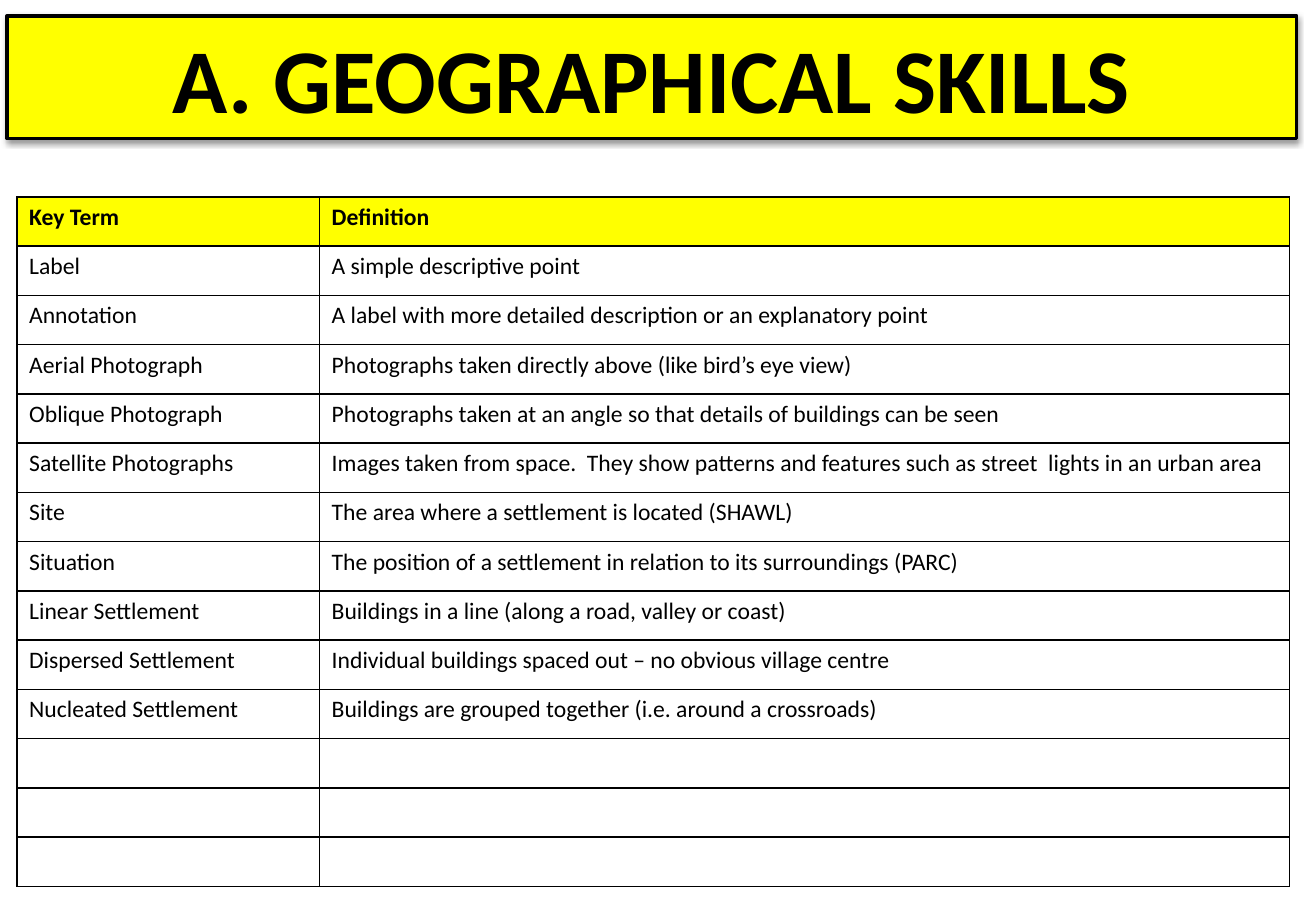
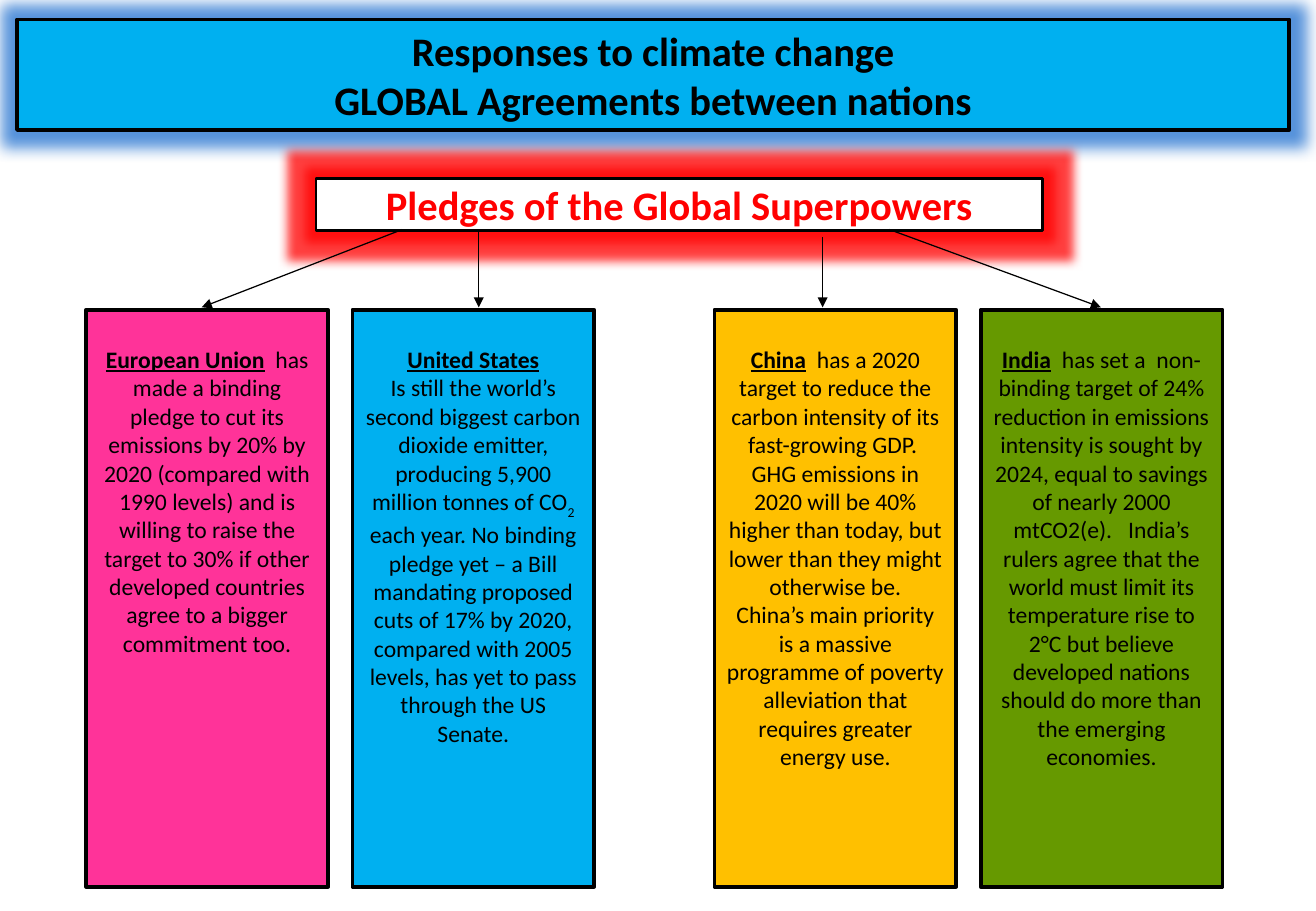
from lxml import etree
from pptx import Presentation
from pptx.dml.color import RGBColor
from pptx.enum.shapes import MSO_CONNECTOR, MSO_SHAPE
from pptx.enum.text import MSO_ANCHOR, MSO_AUTO_SIZE, PP_ALIGN
from pptx.oxml.ns import qn
from pptx.util import Inches, Pt

CENTER, LEFT = PP_ALIGN.CENTER, PP_ALIGN.LEFT
TOP, MIDDLE = MSO_ANCHOR.TOP, MSO_ANCHOR.MIDDLE
RECTANGLE = MSO_SHAPE.RECTANGLE
STRAIGHT = MSO_CONNECTOR.STRAIGHT

# Shared look
FONT = "Calibri"
BLACK, WHITE, RED = "000000", "FFFFFF", "FF0000"
YELLOW, BLUE, PINK = "FFFF00", "00B0F0", "FF3399"
AMBER, GREEN, GLOW_BLUE = "FFC000", "669900", "1F6FCF"
BODY_SIZE = 14
TITLE_ONLY = 5

# Slide 1: terms and definitions
KEY_TERMS = [
    ("Key Term", "Definition"),
    ("Label", "A simple descriptive point"),
    ("Annotation", "A label with more detailed description or an explanatory point"),
    ("Aerial Photograph", "Photographs taken directly above (like bird’s eye view)"),
    ("Oblique Photograph",
     "Photographs taken at an angle so that details of buildings can be seen"),
    ("Satellite Photographs",
     "Images taken from space.  They show patterns and features such as street  "
     "lights in an urban area"),
    ("Site", "The area where a settlement is located (SHAWL)"),
    ("Situation", "The position of a settlement in relation to its surroundings (PARC)"),
    ("Linear Settlement", "Buildings in a line (along a road, valley or coast)"),
    ("Dispersed Settlement", "Individual buildings spaced out – no obvious village centre"),
    ("Nucleated Settlement", "Buildings are grouped together (i.e. around a crossroads)"),
]
SPARE_ROWS = 3
ROW_HEIGHT = 5.68 / (len(KEY_TERMS) + SPARE_ROWS)

# Slide 2: paragraphs of (text, style) spans for each pledge
HEAD, PLAIN, SUB = "head", "plain", "sub"
PLEDGES = [
    (0.71, PINK, [
        [("European Union", HEAD),
         ("  has made a binding pledge to cut its emissions by 20% by 2020 (compared "
          "with 1990 levels) and is willing to raise the target to 30% if other "
          "developed countries agree to a bigger commitment too.", PLAIN)]]),
    (2.9, BLUE, [
        [("United States", HEAD)],
        [("Is still the world’s second biggest carbon dioxide emitter, producing "
          "5,900 million tonnes of CO", PLAIN),
         ("2 ", SUB),
         ("each year. No binding pledge yet – a Bill mandating proposed cuts of 17% "
          "by 2020, compared with 2005 levels, has yet to pass through the US "
          "Senate.", PLAIN)]]),
    (5.88, AMBER, [
        [("China", HEAD),
         ("  has a 2020 target to reduce the carbon intensity of its fast-growing "
          "GDP.  GHG emissions in 2020 will be 40% higher than today, but lower than "
          "they might otherwise be.", PLAIN)],
        [("China’s main priority is a massive programme of poverty alleviation that "
          "requires greater energy use.", PLAIN)]]),
    (8.07, GREEN, [
        [("India", HEAD),
         ("  has set a  non-binding target of 24% reduction in emissions intensity is "
          "sought by 2024, equal to savings of nearly 2000 mtCO2(e).   India’s rulers "
          "agree that the world must limit its temperature rise to 2°C but believe "
          "developed nations should do more than the emerging economies.", PLAIN)]]),
]
ARROWS = [  # start x, start y, end x
    (7.32, 1.89, 9.06), (6.77, 1.95, 6.77), (3.94, 1.89, 3.94), (3.31, 1.89, 1.66),
]
ARROW_END = 2.53


def color(value):
    return RGBColor.from_string(value)


def add_span(para, text, size, ink=BLACK, bold=False):
    span = para.add_run()
    span.text = text
    font = span.font
    font.name, font.size, font.bold = FONT, Pt(size), bold
    font.color.rgb = color(ink)
    return span


def paragraphs(frame, count, align):
    """Return count aligned paragraphs, starting with the existing one."""
    paras = [frame.paragraphs[0]] + [frame.add_paragraph() for _ in range(count - 1)]
    for para in paras:
        para.alignment = align
    return paras


def style_box(box, fill, line_width, anchor, top_inset=0.05):
    box.fill.solid()
    box.fill.fore_color.rgb = color(fill)
    box.line.color.rgb = color(BLACK)
    box.line.width = Pt(line_width)
    frame = box.text_frame
    frame.word_wrap = True
    frame.auto_size = MSO_AUTO_SIZE.NONE
    frame.vertical_anchor = anchor
    frame.margin_top = Inches(top_inset)
    return frame


def add_box(page, area, fill, line_width, anchor, top_inset=0.05):
    box = page.shapes.add_shape(RECTANGLE, *map(Inches, area))
    box.shadow.inherit = False
    return box, style_box(box, fill, line_width, anchor, top_inset)


def add_effect(box, kind, ink, alpha, **settings):
    """Append a glow or shadow to the shape's effect list."""
    box.shadow.inherit = False
    effects = box._element.spPr.find(qn("a:effectLst"))
    return_to = etree.SubElement(effects, qn("a:" + kind), settings)
    tint = etree.SubElement(return_to, qn("a:srgbClr"), val=ink)
    etree.SubElement(tint, qn("a:alpha"), val=str(alpha * 1000))


def add_glow(box, ink, alpha, radius):
    add_effect(box, "glow", ink, alpha, rad=str(Pt(radius)))


def set_title(page, lines, area, fill, size):
    box = page.shapes.title
    box.left, box.top, box.width, box.height = map(Inches, area)
    frame = style_box(box, fill, 2.25, MIDDLE)
    for para, line in zip(paragraphs(frame, len(lines), CENTER), lines):
        add_span(para, line, size, bold=True)
    return box


def add_cell_borders(cell):
    props = cell._tc.get_or_add_tcPr()
    for index, side in enumerate(("lnL", "lnR", "lnT", "lnB")):
        line = etree.Element(qn("a:" + side), w=str(Pt(1)))
        fill = etree.SubElement(line, qn("a:solidFill"))
        etree.SubElement(fill, qn("a:srgbClr"), val=BLACK)
        props.insert(index, line)


def add_terms_table(page):
    row_count = len(KEY_TERMS) + SPARE_ROWS
    table = page.shapes.add_table(
        row_count, 2, Inches(0.14), Inches(1.62),
        Inches(10.47), Inches(ROW_HEIGHT * row_count)).table
    table.columns[0].width, table.columns[1].width = Inches(2.49), Inches(7.98)
    rows = KEY_TERMS + [("", "")] * SPARE_ROWS
    for row_index, texts in enumerate(rows):
        header = row_index == 0
        table.rows[row_index].height = Inches(ROW_HEIGHT)
        for column, text in enumerate(texts):
            cell = table.cell(row_index, column)
            cell.fill.solid()
            cell.fill.fore_color.rgb = color(YELLOW if header else WHITE)
            add_cell_borders(cell)
            if text:
                add_span(cell.text_frame.paragraphs[0], text, BODY_SIZE, bold=header)


def add_pledge(page, left, fill, content):
    _, frame = add_box(page, (left, 2.55, 1.99, 4.75), fill, 2.25, TOP, top_inset=0.29)
    for para, spans in zip(paragraphs(frame, len(content), CENTER), content):
        for text, style in spans:
            span = add_span(para, text, BODY_SIZE, bold=style == HEAD)
            if style == HEAD:
                span.font.underline = True
            elif style == SUB:
                span._r.get_or_add_rPr().set("baseline", "-30000")


def add_arrow(page, start_x, start_y, end_x):
    arrow = page.shapes.add_connector(
        STRAIGHT, *map(Inches, (start_x, start_y, end_x, ARROW_END)))
    arrow.line.color.rgb = color(BLACK)
    arrow.line.width = Pt(0.75)
    etree.SubElement(arrow.line._get_or_add_ln(), qn("a:tailEnd"), type="triangle")
    etree.SubElement(arrow._element.spPr, qn("a:effectLst"))


def build_skills(deck):
    page = deck.slides.add_slide(deck.slide_layouts[TITLE_ONLY])
    title = set_title(page, ["A. GEOGRAPHICAL SKILLS"],
                      (0.06, 0.13, 10.61, 1.01), YELLOW, 54)
    add_effect(title, "outerShdw", BLACK, 38, blurRad=str(Pt(3.1)),
               dist=str(Pt(1.6)), dir="5400000", rotWithShape="0")
    add_terms_table(page)


def build_pledges(deck):
    page = deck.slides.add_slide(deck.slide_layouts[TITLE_ONLY])
    title = set_title(
        page, ["Responses to climate change", "GLOBAL Agreements between nations"],
        (0.14, 0.16, 10.47, 0.91), BLUE, 24)
    add_glow(title, GLOW_BLUE, 75, 18)
    for pledge in PLEDGES:
        add_pledge(page, *pledge)

    # Heading box and its arrows
    heading, frame = add_box(page, (2.6, 1.47, 5.98, 0.43), WHITE, 1.5, MIDDLE)
    add_glow(heading, RED, 75, 12)
    para, = paragraphs(frame, 1, CENTER)
    add_span(para, "Pledges of the Global Superpowers", 24, RED, bold=True)
    for arrow in ARROWS:
        add_arrow(page, *arrow)


def main():
    deck = Presentation()
    deck.slide_width, deck.slide_height = Inches(10.83), Inches(7.5)
    build_skills(deck)
    build_pledges(deck)
    deck.save("out.pptx")


if __name__ == "__main__":
    main()
